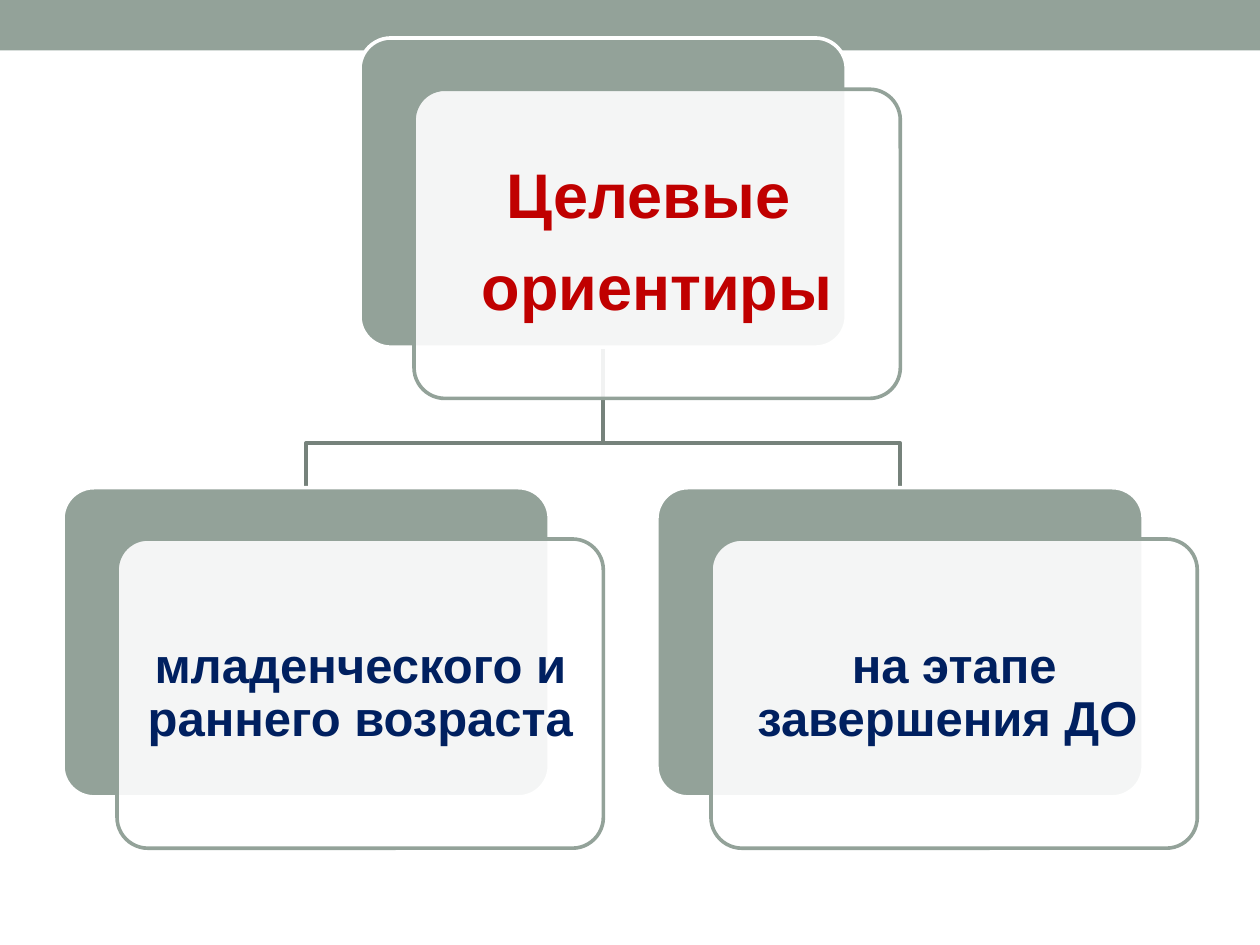
from dataclasses import dataclass

from lxml import etree
from pptx import Presentation
from pptx.dml.color import RGBColor
from pptx.enum.shapes import MSO_SHAPE as Preset
from pptx.enum.text import MSO_ANCHOR as Anchor, PP_ALIGN as Align
from pptx.oxml.ns import qn
from pptx.util import Pt

SAGE = RGBColor(0x93, 0xA2, 0x99)
BRANCH_GREY = RGBColor(0x76, 0x82, 0x7B)
WHITE = RGBColor(0xFF, 0xFF, 0xFF)
RED = RGBColor(0xC0, 0x00, 0x00)
NAVY = RGBColor(0x00, 0x20, 0x60)

PAGE_WIDTH, PAGE_HEIGHT = 720, 540
CARD_WIDTH, CARD_HEIGHT = 277.9, 176.7
FRONT_DX, FRONT_DY = 30.9, 29.3
TEXT_MARGIN = 5.2
LINE_WIDTH = 2.08
TOP_ROW, LOWER_ROW = 21.7, 278.7
LEFT_COLUMN, COLUMN_STEP = 36, 339.4


@dataclass
class Card:
    left: float
    top: float
    lines: list[str]
    size: float
    color: RGBColor
    inset: float

    @property
    def middle(self) -> float:
        return self.left + CARD_WIDTH / 2


ROOT = Card(LEFT_COLUMN + COLUMN_STEP / 2, TOP_ROW,
            ["Целевые ", "ориентиры"], 36, RED, 10.8)
BRANCHES = [
    Card(LEFT_COLUMN + column * COLUMN_STEP, LOWER_ROW, [text], 28, NAVY, 8.4)
    for column, text in enumerate(
        ["младенческого и раннего возраста", "на этапе завершения ДО "])
]


def add_panel(page, left: float, top: float, width: float, height: float,
              fill: RGBColor, *, line: RGBColor | None = None,
              opacity: int = 100, preset=Preset.ROUNDED_RECTANGLE) -> None:
    panel = page.shapes.add_shape(preset, Pt(left), Pt(top), Pt(width), Pt(height))
    panel.shadow.inherit = False
    panel.fill.solid()
    panel.fill.fore_color.rgb = fill
    if preset == Preset.ROUNDED_RECTANGLE:
        panel.adjustments[0] = 0.1
    if opacity < 100:
        color = panel.fill._xPr.find(f".//{qn('a:srgbClr')}")
        etree.SubElement(color, qn("a:alpha")).set("val", str(opacity * 1000))
    if line is None:
        panel.line.fill.background()
    else:
        panel.line.color.rgb = line
        panel.line.width = Pt(LINE_WIDTH)


def add_text(page, lines: list[str], left: float, top: float, width: float,
             height: float, *, size: float, color: RGBColor, inset: float) -> None:
    box = page.shapes.add_textbox(Pt(left), Pt(top), Pt(width), Pt(height))
    frame = box.text_frame
    frame.word_wrap = True
    frame.vertical_anchor = Anchor.MIDDLE
    frame.margin_left = frame.margin_right = Pt(inset)
    frame.margin_top = frame.margin_bottom = Pt(inset)
    for index, line in enumerate(lines):
        para = frame.add_paragraph() if index else frame.paragraphs[0]
        para.alignment = Align.CENTER
        para.line_spacing = 0.9
        para.space_after = Pt(round(size * 0.39))
        span = para.add_run()
        span.text = line
        span.font.name = "Arial"
        span.font.size = Pt(size)
        span.font.bold = True
        span.font.color.rgb = color


def add_card(page, card: Card) -> None:
    """Draw a solid back panel, a translucent front panel and the text."""
    front_left, front_top = card.left + FRONT_DX, card.top + FRONT_DY
    add_panel(page, card.left, card.top, CARD_WIDTH, CARD_HEIGHT, SAGE, line=WHITE)
    add_panel(page, front_left, front_top, CARD_WIDTH, CARD_HEIGHT, WHITE,
              line=SAGE, opacity=90)
    add_text(page, card.lines, front_left + TEXT_MARGIN, front_top + TEXT_MARGIN,
             CARD_WIDTH - 2 * TEXT_MARGIN, CARD_HEIGHT - 2 * TEXT_MARGIN,
             size=card.size, color=card.color, inset=card.inset)


def add_branch(page, parent: Card, child: Card) -> None:
    """Draw the elbow line from the parent's bottom to the child's top."""
    start = parent.top + CARD_HEIGHT
    bend = start + (child.top - start) * 0.68
    builder = page.shapes.build_freeform(Pt(parent.middle), Pt(start))
    builder.add_line_segments(
        [(Pt(parent.middle), Pt(bend)), (Pt(child.middle), Pt(bend)),
         (Pt(child.middle), Pt(child.top))], close=False)
    branch = builder.convert_to_shape()
    branch.shadow.inherit = False
    branch.fill.background()
    branch.line.color.rgb = BRANCH_GREY
    branch.line.width = Pt(LINE_WIDTH)


def main() -> None:
    deck = Presentation()
    deck.slide_width, deck.slide_height = Pt(PAGE_WIDTH), Pt(PAGE_HEIGHT)
    page = deck.slides.add_slide(deck.slide_layouts[6])
    add_panel(page, 0, 0, PAGE_WIDTH, 28.8, SAGE, preset=Preset.RECTANGLE)
    for child in reversed(BRANCHES):
        add_branch(page, ROOT, child)
    for card in [ROOT, *BRANCHES]:
        add_card(page, card)
    deck.save("out.pptx")


if __name__ == "__main__":
    main()
